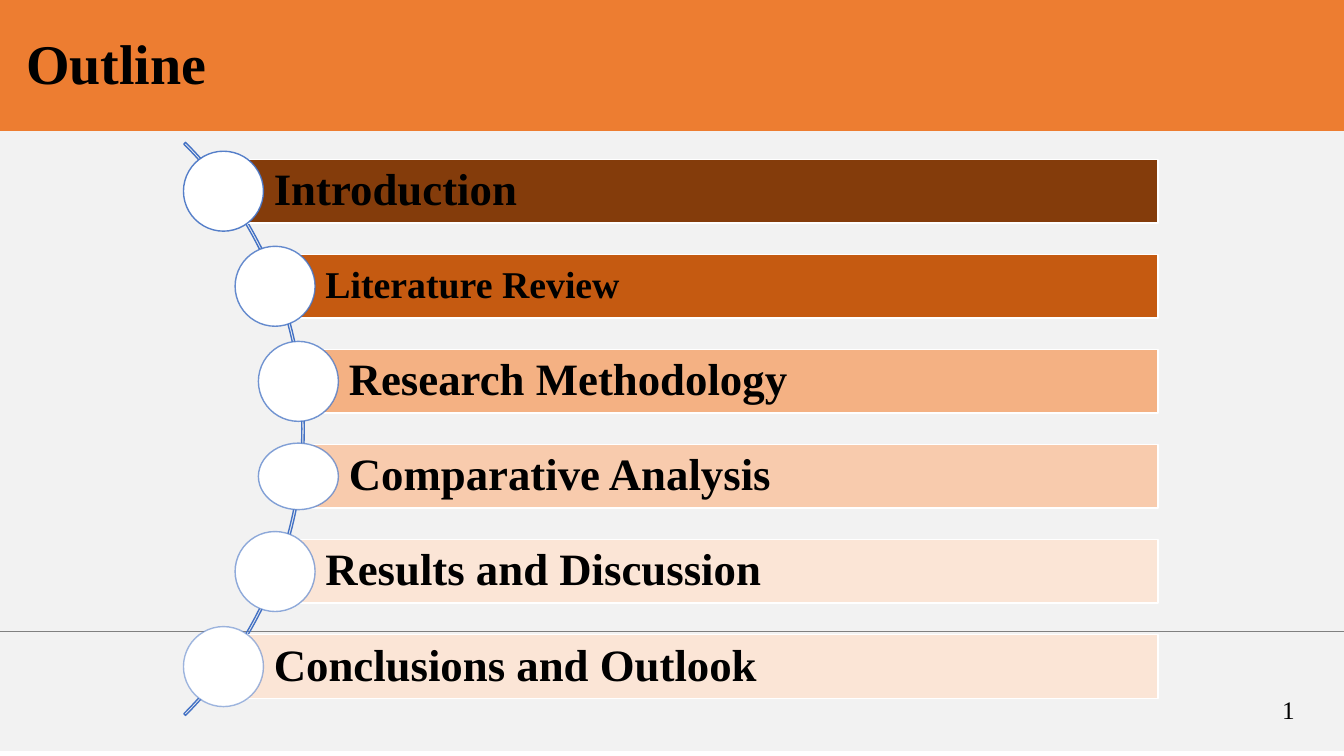
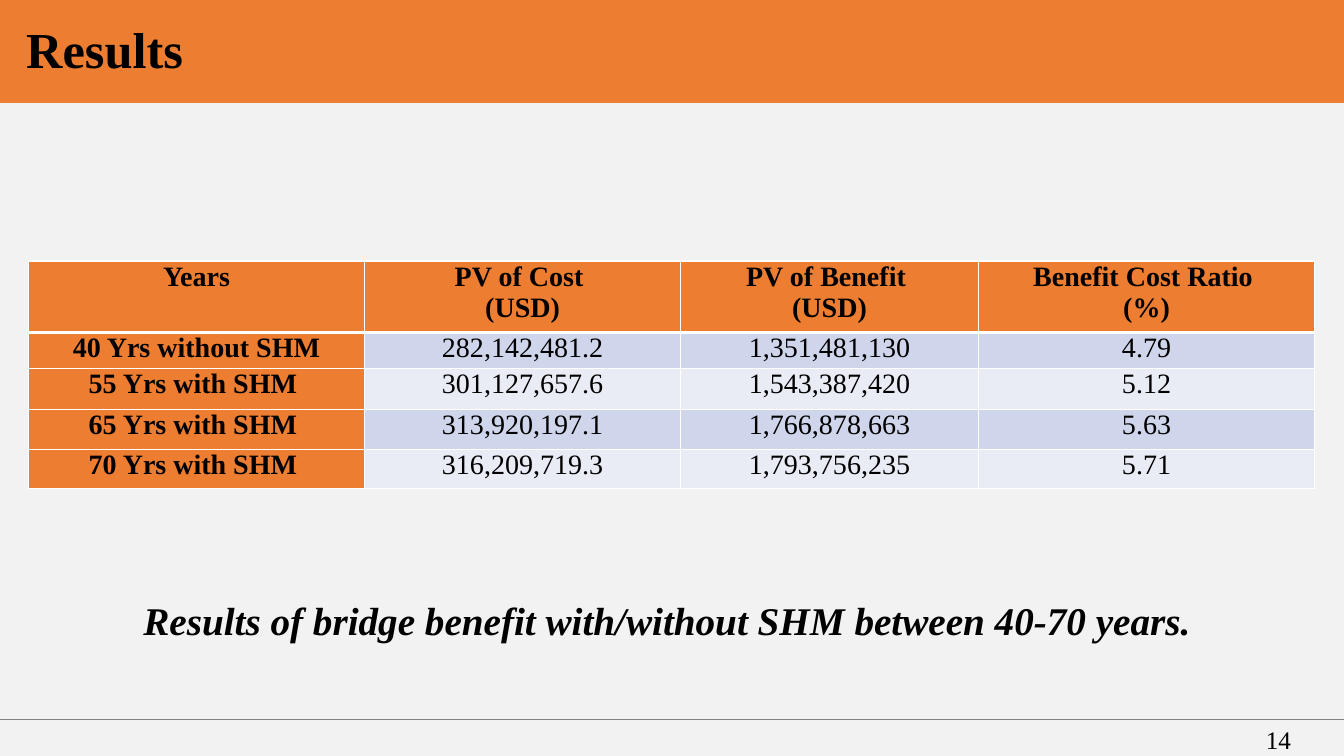
import math
from dataclasses import dataclass

from lxml import etree
from pptx import Presentation
from pptx import util as u
from pptx.dml.color import RGBColor
from pptx.enum import shapes, text
from pptx.oxml import ns

WIDTH, HEIGHT = u.Inches(13.333), u.Inches(7.5)
COLUMNS = 40
CELL = WIDTH / COLUMNS

FONT = "Times New Roman"
ORANGE, PAPER, RULE = "ED7D31", "F2F2F2", "808080"
WHITE, BLACK, BLUE = "FFFFFF", "000000", "4472C4"
STRIPES = ("CFD5EA", "E9EBF5")
PLAIN_TABLE = "{2D5ABB26-0587-4C30-8999-92F81FD0307C}"
SIDES = ("L", "R", "T", "B")
FRAME_COLUMNS = (32.43, 7.57)


@dataclass
class Box:
    left: float
    top: float
    width: float
    height: float

    def place(self):
        return [grid(n) for n in (self.left, self.top, self.width, self.height)]


def grid(count):
    return u.Emu(round(count * CELL))


def color(value):
    return RGBColor.from_string(value)


def paint(target, value):
    target.fill.solid()
    target.fill.fore_color.rgb = color(value)


def write(frame, content, size=18, bold=False, italic=False,
          align=text.PP_ALIGN.LEFT, before=0, spacing=1.0):
    for index, line in enumerate(content.split("\n")):
        para = frame.add_paragraph() if index else frame.paragraphs[0]
        para.alignment = align
        para.space_before = u.Pt(before)
        para.line_spacing = spacing
        span = para.add_run()
        span.text = line
        font = span.font
        font.name, font.size = FONT, u.Pt(size)
        font.bold, font.italic = bold, italic
        font.color.rgb = color(BLACK)


def inset(target, left, top, right, bottom):
    target.margin_left, target.margin_top = grid(left), grid(top)
    target.margin_right, target.margin_bottom = grid(right), grid(bottom)


def add_text(page, box, content, **style):
    frame = page.shapes.add_textbox(*box.place()).text_frame
    frame.word_wrap = True
    frame.auto_size = text.MSO_AUTO_SIZE.SHAPE_TO_FIT_TEXT
    write(frame, content, **style)


def add_preset(parent, kind, box, fill=None, line=WHITE, opacity=100):
    shape = parent.shapes.add_shape(kind, *box.place())
    shape.shadow.inherit = False
    if fill:
        paint(shape, fill)
    else:
        shape.fill.background()
    shape.line.color.rgb = color(line)
    shape.line.width = u.Pt(1)
    if opacity < 100:
        tint = shape.line._ln.find(".//" + ns.qn("a:srgbClr"))
        etree.SubElement(tint, ns.qn("a:alpha"), val=str(opacity * 1000))
    return shape


def add_grid(page, left, top, columns, rows):
    box = Box(left, top, sum(columns), sum(rows))
    holder = page.shapes.add_table(len(rows), len(columns), *box.place())
    table = holder.table
    table.first_row = table.horz_banding = False
    table._tbl.tblPr.find(ns.qn("a:tableStyleId")).text = PLAIN_TABLE
    for column, width in zip(table.columns, columns):
        column.width = grid(width)
    for row, height in zip(table.rows, rows):
        row.height = grid(height)
    return table


def border(cell, **sides):
    properties = cell._tc.get_or_add_tcPr()
    present = [side for side in SIDES if side in sides]
    for index, side in enumerate(present):
        value, width = sides[side]
        line = etree.Element(ns.qn("a:ln" + side), w=str(u.Pt(width)))
        fill = etree.SubElement(line, ns.qn("a:solidFill"))
        etree.SubElement(fill, ns.qn("a:srgbClr"), val=value)
        properties.insert(index, line)


def add_frame(page, title, size, rows, number, number_box):
    table = add_grid(page, 0, 0, FRAME_COLUMNS, rows)
    fills = (ORANGE, PAPER, PAPER)
    edges = ({}, {"B": (RULE, 0.75)}, {"T": (RULE, 0.75)})
    for row, fill, edge in zip(table.rows, fills, edges):
        for cell in row.cells:
            paint(cell, fill)
            border(cell, **edge)
    heading = table.cell(0, 0)
    heading.vertical_anchor = text.MSO_ANCHOR.MIDDLE
    inset(heading, 0.78, 0.42, 0.78, 0.39)
    write(heading.text_frame, title, size=size, bold=True)
    return lambda: add_text(page, number_box, number)


def add_outline(page, box, topics):
    group = page.shapes.add_group_shape()
    dot, bar, orbit, radius = 2.38, 1.89, 11.97, 12.06
    pitch = (box.height - dot) / (len(topics) - 1)
    middle = box.top + box.height / 2
    reach = (box.height - dot) / 2
    center = box.left + dot / 2 - math.sqrt(orbit ** 2 - reach ** 2)
    arc = add_preset(group, shapes.MSO_SHAPE.BLOCK_ARC,
                     Box(center - radius, middle - radius, 2 * radius, 2 * radius),
                     line=BLUE)
    for index, value in enumerate((189, 27, 0.003)):
        arc.adjustments[index] = value
    for index, (topic, fill, size, dot_height) in enumerate(topics):
        offset = index * pitch - reach
        x, y = center + math.sqrt(orbit ** 2 - offset ** 2), middle + offset
        strip = add_preset(group, shapes.MSO_SHAPE.RECTANGLE,
                           Box(x, y - bar / 2, box.left + box.width - x, bar), fill)
        frame = strip.text_frame
        frame.word_wrap = True
        frame.vertical_anchor = text.MSO_ANCHOR.MIDDLE
        inset(frame, 1.5, 0.27, 0.27, 0.27)
        write(frame, topic, size=size, bold=True, spacing=0.9)
        add_preset(group, shapes.MSO_SHAPE.OVAL,
                   Box(x - dot / 2, y - dot_height / 2, dot, dot_height),
                   WHITE, BLUE, opacity=90 - 8 * index)


def add_results(page, left, top, columns, rows, values):
    table = add_grid(page, left, top, columns, rows)
    for r, line in enumerate(values):
        for c, content in enumerate(line):
            cell = table.cell(r, c)
            header = r == 0 or c == 0
            paint(cell, ORANGE if header else STRIPES[(r - 1) % 2])
            edges = dict.fromkeys(SIDES, (WHITE, 1))
            if r < 2:
                edges["T" if r else "B"] = (WHITE, 3)
            border(cell, **edges)
            inset(cell, 0.48, 0, 0.48, 0)
            write(cell.text_frame, content, size=20, bold=header,
                  align=text.PP_ALIGN.CENTER, before=0.4)


TOPICS = (
    ("Introduction", "843C0B", 32, 2.38),
    ("Literature Review", "C55A11", 27, 2.38),
    ("Research Methodology", "F4B183", 32, 2.38),
    ("Comparative Analysis", "F8CBAD", 32, 1.98),
    ("Results and Discussion", "FBE5D6", 32, 2.38),
    ("Conclusions and Outlook", "FBE5D6", 32, 2.38),
)
RESULTS = (
    ("Years", "PV of Cost \n(USD)", "PV of Benefit \n(USD)", "Benefit Cost Ratio \n(%)"),
    ("40 Yrs without SHM", "282,142,481.2", "1,351,481,130", "4.79"),
    ("55 Yrs with SHM ", "301,127,657.6", "1,543,387,420", "5.12"),
    ("65 Yrs with SHM ", "313,920,197.1", "1,766,878,663", "5.63"),
    ("70 Yrs with SHM ", "316,209,719.3", "1,793,756,235", "5.71"),
)


def outline_page(page):
    add_number = add_frame(page, "Outline", 40, (3.9, 14.91, 3.54),
                           "1", Box(37.86, 20.52, 1.44, 1.2))
    add_outline(page, Box(5.46, 4.5, 29.01, 16.53), TOPICS)
    add_number()


def results_page(page):
    add_number = add_frame(page, "Results", 36, (3.06, 18.36, 2.76),
                           "14", Box(37.38, 21.42, 1.44, 1.2))
    add_text(page, Box(0.84, 17.61, 38.31, 1.71),
             "Results of bridge benefit with/without SHM between 40-70 years. ",
             size=28, bold=True, italic=True, align=text.PP_ALIGN.CENTER)
    add_results(page, 0.84, 7.77, (10.02, 9.39, 8.88, 9.99),
                (2.13, 1.08, 1.2, 1.2, 1.17), RESULTS)
    add_number()


def main():
    deck = Presentation()
    deck.slide_width, deck.slide_height = WIDTH, HEIGHT
    for build in (outline_page, results_page):
        build(deck.slides.add_slide(deck.slide_layouts[6]))
    deck.save("out.pptx")


if __name__ == "__main__":
    main()
